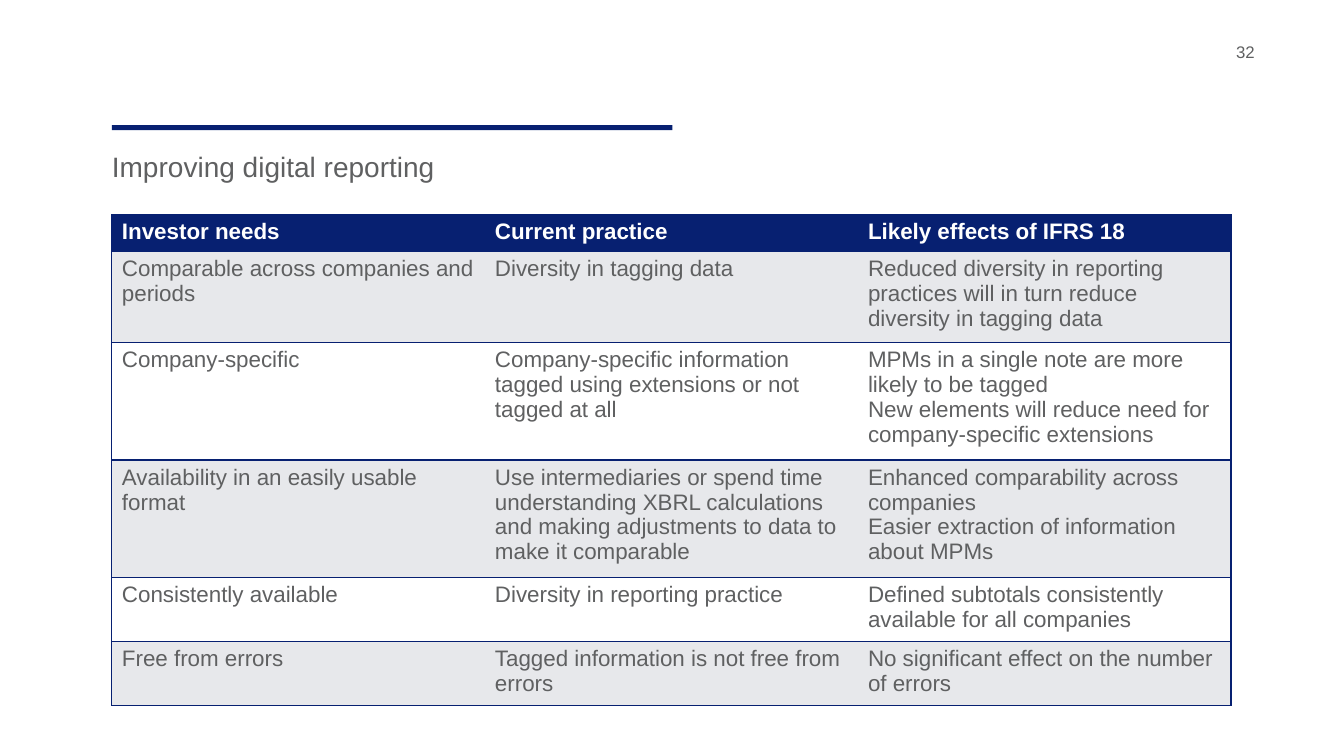
from lxml import etree
from pptx import Presentation
from pptx.dml.color import RGBColor
from pptx.enum.shapes import MSO_SHAPE
from pptx.oxml.ns import qn
from pptx.util import Inches, Pt

RECTANGLE = MSO_SHAPE.RECTANGLE
NAVY = RGBColor(0x07, 0x20, 0x71)
GREY = RGBColor(0x5F, 0x60, 0x61)
PALE = RGBColor(0xE7, 0xE8, 0xEB)
WHITE = RGBColor(0xFF, 0xFF, 0xFF)

ROWS = [
    ["Investor needs", "Current practice", "Likely effects of IFRS 18"],
    ["Comparable across companies and periods",
     "Diversity in tagging data",
     "Reduced diversity in reporting practices will in turn reduce "
     "diversity in tagging data"],
    ["Company-specific",
     "Company-specific information tagged using extensions or not tagged at all",
     "MPMs in a single note are more likely to be tagged\n"
     "New elements will reduce need for company-specific extensions"],
    ["Availability in an easily usable format",
     "Use intermediaries or spend time understanding XBRL calculations "
     "and making adjustments to data to make it comparable",
     "Enhanced comparability across companies\n"
     "Easier extraction of information about MPMs"],
    ["Consistently available",
     "Diversity in reporting practice",
     "Defined subtotals consistently available for all companies"],
    ["Free from errors",
     "Tagged information is not free from errors",
     "No significant effect on the number of errors"],
]
ROW_HEIGHTS = [0.35, 0.84, 1.09, 1.09, 0.59, 0.59]


def write_text(tf, text, size, color, bold=False):
    tf.text = text
    for p in tf.paragraphs:
        for r in p.runs:
            for name, value in {"name": "Arial", "size": Pt(size), "bold": bold}.items():
                setattr(r.font, name, value)
            r.font.color.rgb = color


def add_label(s, left, top, width, height, text, size):
    tf = s.shapes.add_textbox(
        Inches(left), Inches(top), Inches(width), Inches(height)).text_frame
    margins = dict.fromkeys(
        ["margin_left", "margin_top", "margin_right", "margin_bottom"], 0)
    for name, value in {"word_wrap": True, **margins}.items():
        setattr(tf, name, value)
    write_text(tf, text, size, GREY)


def add_heading(s, left, top, width, text):
    bar = s.shapes.add_shape(
        RECTANGLE, Inches(left), Inches(top), Inches(width), Inches(0.05))
    bar.shadow.inherit = False
    bar.fill.solid()
    bar.fill.fore_color.rgb = NAVY
    bar.line.fill.background()
    add_label(s, left, top + 0.24, width, 0.4, text, 20)


def set_borders(cell, visible):
    tc_pr = cell._tc.get_or_add_tcPr()
    for side in "LRTB":
        ln = etree.SubElement(tc_pr, qn(f"a:ln{side}"), w=str(Pt(1)))
        if side in visible:
            fill = etree.SubElement(ln, qn("a:solidFill"))
            etree.SubElement(fill, qn("a:srgbClr"), val=str(NAVY))
        else:
            etree.SubElement(ln, qn("a:noFill"))


def add_needs_table(s, left, top, width):
    columns = len(ROWS[0])
    table = s.shapes.add_table(
        len(ROWS), columns, Inches(left), Inches(top),
        Inches(width), Inches(sum(ROW_HEIGHTS))).table
    for column in table.columns:
        column.width = Inches(width / columns)
    for i, (texts, height) in enumerate(zip(ROWS, ROW_HEIGHTS)):
        table.rows[i].height = Inches(height)
        header = i == 0
        fill = NAVY if header else PALE if i % 2 else WHITE
        for j, text in enumerate(texts):
            cell = table.cell(i, j)
            edges = {0: "L", columns - 1: "R"}
            set_borders(cell, "TB" + edges.get(j, ""))
            cell.fill.solid()
            cell.fill.fore_color.rgb = fill
            write_text(cell.text_frame, text, 16, WHITE if header else GREY, header)


def main():
    prs = Presentation()
    prs.slide_width, prs.slide_height = Inches(13.33), Inches(7.5)
    s = prs.slides.add_slide(prs.slide_layouts[6])
    add_heading(s, 1.11, 1.24, 5.56, "Improving digital reporting")
    add_label(s, 12.26, 0.41, 0.67, 0.29, "32", 12)
    add_needs_table(s, 1.11, 2.13, 11.1)
    prs.save("out.pptx")


if __name__ == "__main__":
    main()
